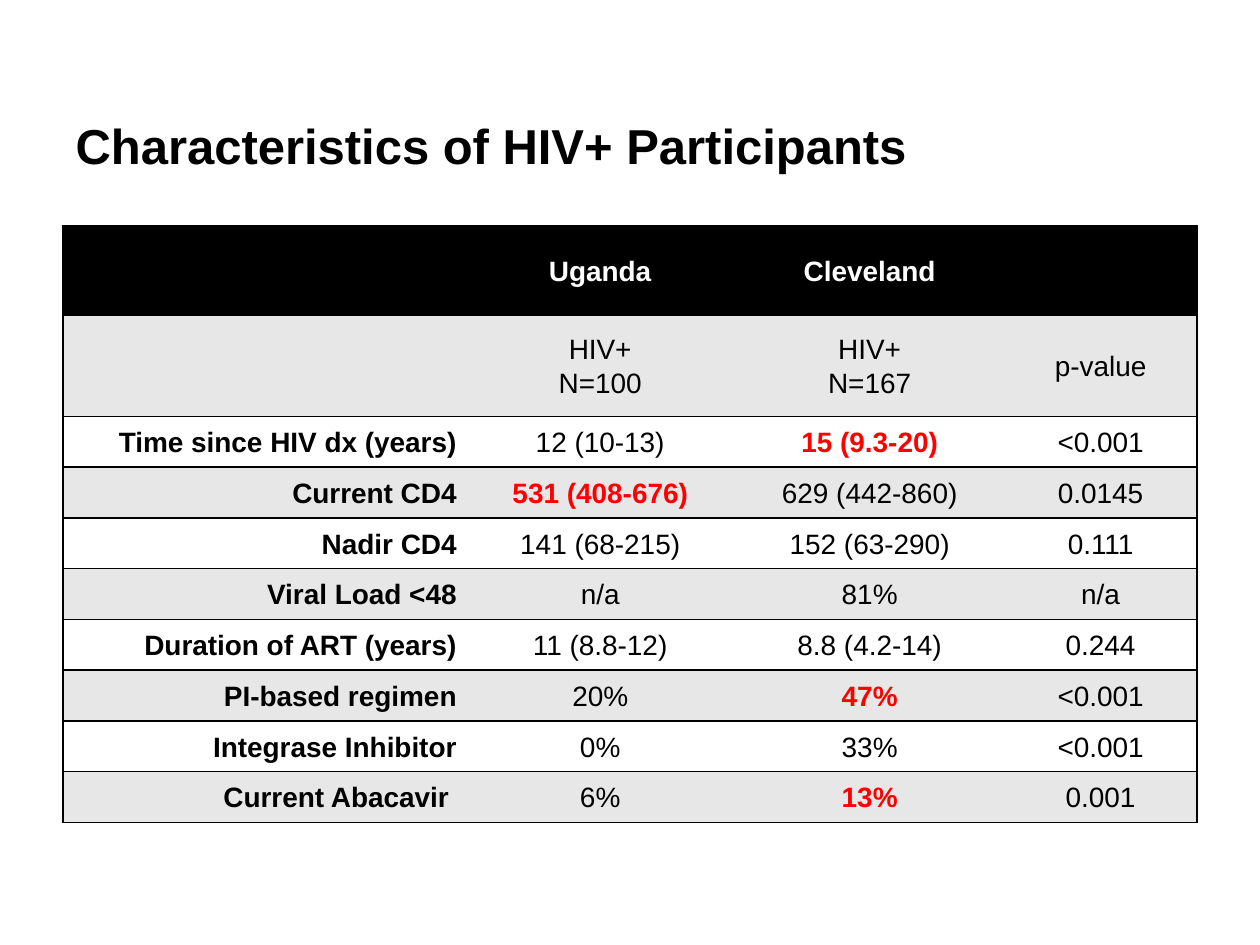
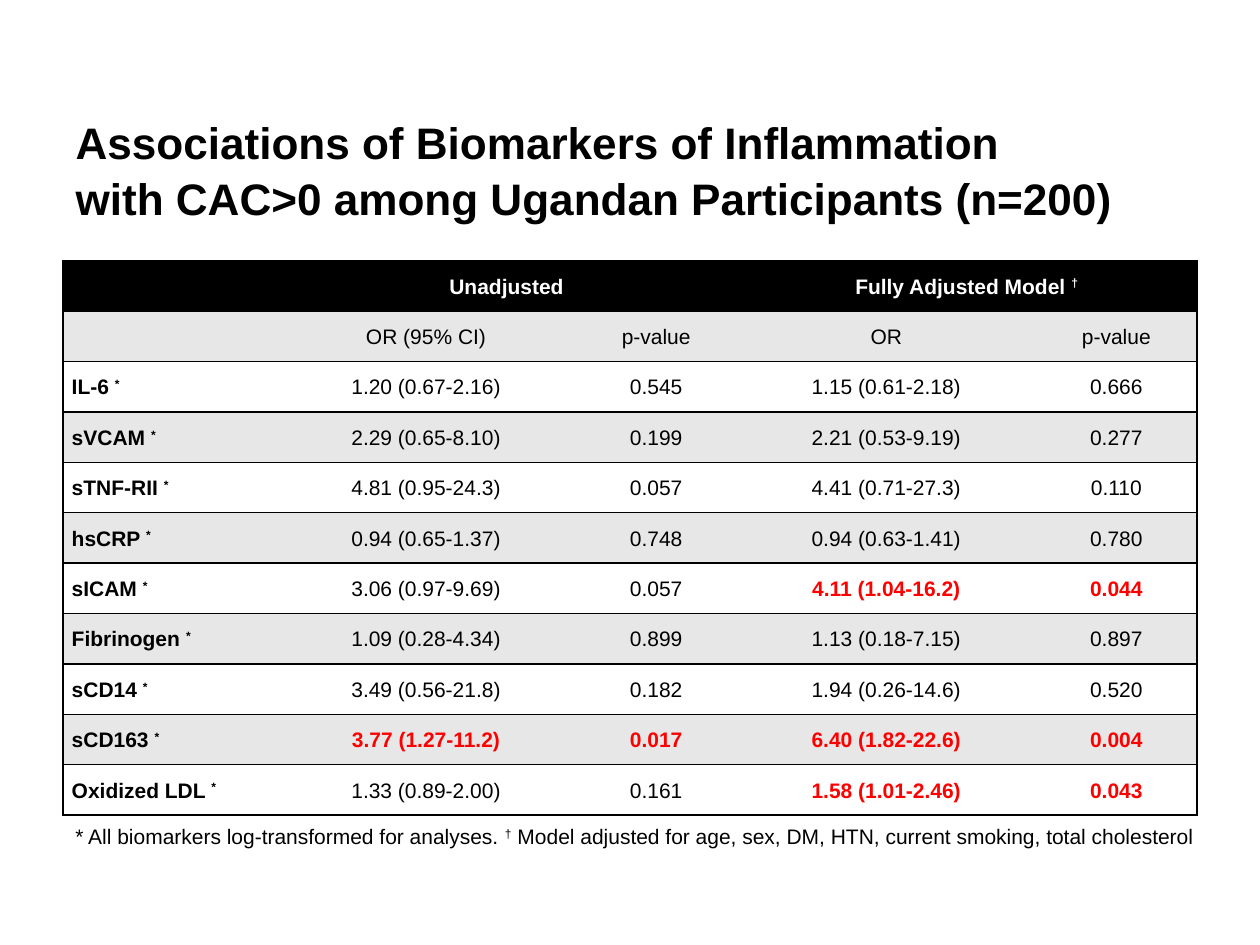
from lxml import etree
from pptx import Presentation
from pptx.dml.color import RGBColor
from pptx.enum.text import MSO_ANCHOR, MSO_AUTO_SIZE, PP_ALIGN
from pptx.oxml.ns import qn
from pptx.util import Pt

FONT = "Arial"
BLACK, WHITE, GREY, RED = "000000", "FFFFFF", "E7E7E7", "FF0000"
LINE_SPACING = 1.07
LEFT, WIDTH = 36, 648
PLAIN_TABLE_STYLE = "{2D5ABB26-0587-4C30-8999-92F81FD0307C}"


def add_runs(paragraph, text, size, color=BLACK, bold=False):
    """Add text run by run; every second piece between ^ marks is superscript."""
    for i, piece in enumerate(text.split("^")):
        if not piece:
            continue
        run = paragraph.add_run()
        run.text = piece
        run.font.name = FONT
        run.font.size = Pt(size)
        run.font.bold = bold
        run.font.color.rgb = RGBColor.from_string(color)
        if i % 2:
            run._r.get_or_add_rPr().set("baseline", "30000")


def add_border(cell, side):
    """Draw a black 1 pt line on one side (L, R, T or B); call before filling the cell."""
    line = etree.SubElement(cell._tc.get_or_add_tcPr(), qn(f"a:ln{side}"), w=str(Pt(1)))
    fill = etree.SubElement(line, qn("a:solidFill"))
    etree.SubElement(fill, qn("a:srgbClr"), val=BLACK)


# A leading "!" marks a significant value, shown in bold red.
participants = [
    ["", "Uganda", "Cleveland", ""],
    ["", "HIV+\nN=100", "HIV+\nN=167", "p-value"],
    ["Time since HIV dx (years)", "12 (10-13)", "!15 (9.3-20)", "<0.001"],
    ["Current CD4", "!531 (408-676)", "629 (442-860)", "0.0145"],
    ["Nadir CD4", "141 (68-215)", "152 (63-290)", "0.111"],
    ["Viral Load <48", "n/a", "81%", "n/a"],
    ["Duration of ART (years)", "11 (8.8-12)", "8.8 (4.2-14)", "0.244"],
    ["PI-based regimen", "20%", "!47%", "<0.001"],
    ["Integrase Inhibitor", "0%", "33%", "<0.001"],
    ["Current Abacavir ", "6%", "!13%", "0.001"],
]
biomarkers = [
    ["", "Unadjusted", "", "Fully Adjusted Model ^†", ""],
    ["", "OR (95% CI)", "p-value", "OR", "p-value"],
    ["IL-6 ^*", "1.20 (0.67-2.16)", "0.545", "1.15 (0.61-2.18)", "0.666"],
    ["sVCAM ^*", "2.29 (0.65-8.10)", "0.199", "2.21 (0.53-9.19)", "0.277"],
    ["sTNF-RII ^*", "4.81 (0.95-24.3)", "0.057", "4.41 (0.71-27.3)", "0.110"],
    ["hsCRP ^*", "0.94 (0.65-1.37)", "0.748", "0.94 (0.63-1.41)", "0.780"],
    ["sICAM ^*", "3.06 (0.97-9.69)", "0.057", "!4.11 (1.04-16.2)", "!0.044"],
    ["Fibrinogen ^*", "1.09 (0.28-4.34)", "0.899", "1.13 (0.18-7.15)", "0.897"],
    ["sCD14 ^*", "3.49 (0.56-21.8)", "0.182", "1.94 (0.26-14.6)", "0.520"],
    ["sCD163 ^*", "!3.77 (1.27-11.2)", "!0.017", "!6.40 (1.82-22.6)", "!0.004"],
    ["Oxidized LDL ^*", "1.33 (0.89-2.00)", "0.161", "!1.58 (1.01-2.46)", "!0.043"],
]
pages = [
    dict(title=["Characteristics of HIV+ Participants"], title_size=28,
         rows=participants, top=129, columns=[230, 154, 154, 110],
         heights=[51, 58] + [29] * 8, size=16, label_align=PP_ALIGN.RIGHT,
         merged=[], footnote=""),
    dict(title=["Associations of Biomarkers of Inflammation",
                "with CAC>0 among Ugandan Participants (n=200)"], title_size=25.2,
         rows=biomarkers, top=149, columns=[122, 171, 92, 171, 92],
         heights=[28.8] * 11, size=12, label_align=PP_ALIGN.LEFT,
         merged=[(1, 2), (3, 4)],
         footnote="* All biomarkers log-transformed for analyses. ^†^ Model adjusted "
                  "for age, sex, DM, HTN, current smoking, total cholesterol"),
]

prs = Presentation()
prs.slide_width, prs.slide_height = Pt(720), Pt(540)

for page in pages:
    slide = prs.slides.add_slide(prs.slide_layouts[5])

    title = slide.shapes.title
    title.left, title.top, title.width, title.height = Pt(LEFT), Pt(61), Pt(WIDTH), Pt(50.4)
    title.text_frame.auto_size = MSO_AUTO_SIZE.NONE
    title.text_frame.vertical_anchor = MSO_ANCHOR.TOP
    heading = title.text_frame.paragraphs[0]
    heading.alignment = PP_ALIGN.LEFT
    heading.line_spacing = 1.05
    for i, line in enumerate(page["title"]):
        if i:
            heading.add_line_break()
        add_runs(heading, line, page["title_size"], bold=True)

    rows, columns, heights = page["rows"], page["columns"], page["heights"]
    table = slide.shapes.add_table(len(rows), len(columns), Pt(LEFT), Pt(page["top"]),
                                   Pt(WIDTH), Pt(sum(heights))).table
    table._tbl.tblPr.find(qn("a:tableStyleId")).text = PLAIN_TABLE_STYLE
    table.horz_banding = False
    for column, width in zip(table.columns, columns):
        column.width = Pt(width)
    for row, height in zip(table.rows, heights):
        row.height = Pt(height)
    for first, last in page["merged"]:
        table.cell(0, first).merge(table.cell(0, last))

    for r, values in enumerate(rows):
        for c, value in enumerate(values):
            cell = table.cell(r, c)
            if c == 0:
                add_border(cell, "L")
            if c + cell.span_width == len(columns):
                add_border(cell, "R")
            add_border(cell, "T")
            add_border(cell, "B")
            cell.fill.solid()
            band = BLACK if r == 0 else GREY if r % 2 else WHITE
            cell.fill.fore_color.rgb = RGBColor.from_string(band)
            cell.vertical_anchor = MSO_ANCHOR.MIDDLE
            cell.margin_left = cell.margin_right = Pt(5)
            cell.margin_top = cell.margin_bottom = Pt(0)

            significant = value.startswith("!")
            color = WHITE if r == 0 else RED if significant else BLACK
            bold = r == 0 or c == 0 or significant
            for i, line in enumerate(value.lstrip("!").split("\n")):
                frame = cell.text_frame
                paragraph = frame.add_paragraph() if i else frame.paragraphs[0]
                paragraph.alignment = PP_ALIGN.CENTER if c else page["label_align"]
                paragraph.line_spacing = LINE_SPACING
                add_runs(paragraph, line, page["size"], color, bold)

    if page["footnote"]:
        footnote = slide.shapes.add_textbox(Pt(LEFT), Pt(466), Pt(658), Pt(21.6)).text_frame
        footnote.word_wrap = True
        footnote.auto_size = MSO_AUTO_SIZE.SHAPE_TO_FIT_TEXT
        footnote.paragraphs[0].line_spacing = LINE_SPACING
        add_runs(footnote.paragraphs[0], page["footnote"], 12)

prs.save("out.pptx")
